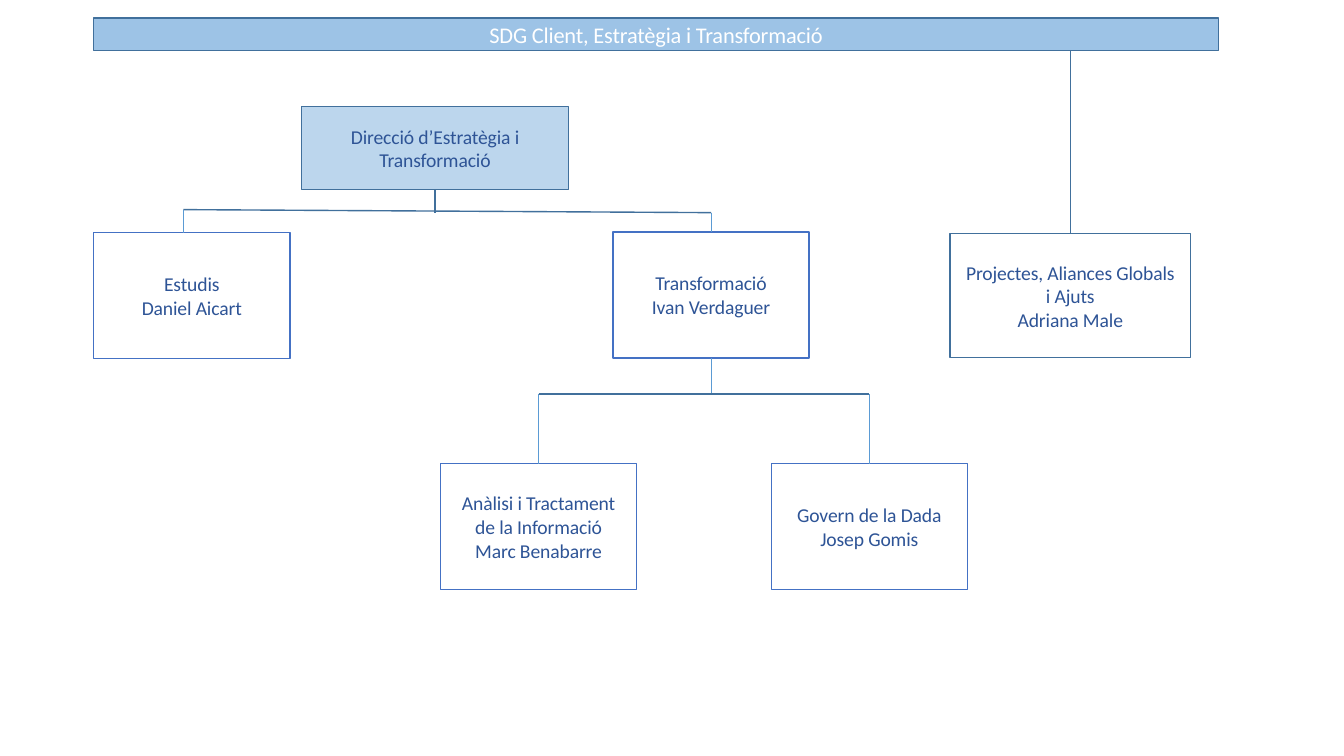
import pptx
import pptx.util
import pptx.dml.color
import pptx.enum.shapes
import pptx.enum.text
import pptx.oxml.ns
from lxml import etree

RGB = pptx.dml.color.RGBColor
WHITE = RGB(0xFF, 0xFF, 0xFF)
BAR_BLUE = RGB(0x9D, 0xC3, 0xE6)
PALE_BLUE = RGB(0xBC, 0xD6, 0xED)
TEXT_BLUE = RGB(0x2E, 0x54, 0x96)
BOX_BLUE = RGB(0x44, 0x71, 0xC4)
STEEL = RGB(0x41, 0x70, 0x9C)
SKY = RGB(0x5B, 0x9B, 0xD4)

# Positions are percentages of the slide's width and height
SLIDE_W, SLIDE_H = pptx.util.Inches(13.33), pptx.util.Inches(7.5)
UNIT_W, UNIT_H = 14.59, 16.67
TOP, BOTTOM = 0, 2


def x(share):
    return round(SLIDE_W * share / 100)


def y(share):
    return round(SLIDE_H * share / 100)


def middle(sp):
    return sp.left + sp.width // 2


def write(tf, text, size=14, color=TEXT_BLUE, spacing=-10):
    """One paragraph per line; a vertical tab breaks a line within one."""
    for i, line in enumerate(text.split("\n")):
        p = tf.paragraphs[0] if i == 0 else tf.add_paragraph()
        p.text = line
        p.alignment = pptx.enum.text.PP_ALIGN.CENTER
        for r in p.runs:
            r.font.name = "Calibri"
            r.font.size = pptx.util.Pt(size)
            r.font.color.rgb = color
            r.font._element.set("spc", str(spacing))


def add_box(s, text, left, top, width=UNIT_W, height=UNIT_H,
            fill=None, line=BOX_BLUE, **fmt):
    sp = s.shapes.add_shape(pptx.enum.shapes.MSO_SHAPE.RECTANGLE,
                            x(left), y(top), x(width), y(height))
    sp.shadow.inherit = False
    if fill is None:
        sp.fill.background()
    else:
        sp.fill.solid()
        sp.fill.fore_color.rgb = fill
    sp.line.color.rgb = line
    sp.line.width = pptx.util.Pt(1)
    tf = sp.text_frame
    tf.word_wrap = True
    tf.vertical_anchor = pptx.enum.text.MSO_ANCHOR.MIDDLE
    tf.margin_left = tf.margin_right = tf.margin_top = tf.margin_bottom = 0
    write(tf, text, **fmt)
    return sp


def add_line(s, x1, y1, x2, y2, color=STEEL, weight=1, begin=None, end=None):
    c = s.shapes.add_connector(pptx.enum.shapes.MSO_CONNECTOR.STRAIGHT,
                               x1, y1, x2, y2)
    c.line.color.rgb = color
    c.line.width = pptx.util.Pt(weight)
    etree.SubElement(c._element.spPr, pptx.oxml.ns.qn("a:effectLst"))
    if begin is not None:
        c.begin_connect(begin, BOTTOM)
    if end is not None:
        c.end_connect(end, TOP)


def main():
    prs = pptx.Presentation()
    prs.slide_width, prs.slide_height = SLIDE_W, SLIDE_H
    s = prs.slides.add_slide(prs.slide_layouts[6])

    # Units of the organisation
    bar = add_box(s, "SDG Client, Estratègia i Transformació", 6.98, 2.4,
                  83.68, 4.3, fill=BAR_BLUE, line=STEEL, size=16, color=WHITE)
    direction = add_box(s, "Direcció d’Estratègia i\vTransformació",
                        22.43, 14.13, 19.88, 10.93, fill=PALE_BLUE, line=STEEL)
    studies = add_box(s, "Estudis\nDaniel Aicart", 6.98, 30.8)
    transformation = add_box(s, "Transformació\nIvan Verdaguer", 45.61, 30.67)
    projects = add_box(s, "Projectes, Aliances Globals\vi Ajuts\nAdriana Male",
                       70.67, 30.93, 17.93, 16.4, line=STEEL)
    teams = [
        add_box(s, text, left, 61.33) for text, left in (
            ("Anàlisi i Tractament\vde la Informació\nMarc Benabarre", 32.78),
            ("Govern de la Dada\nJosep Gomis", 57.39))]

    # Top bar to projects
    mid = middle(projects)
    add_line(s, mid, bar.top + bar.height, mid, projects.top, end=projects)

    # Direction to its two areas, along a slightly sloping rail
    mid, left, right = middle(direction), x(13.65), middle(transformation)
    rail_left, rail_right = y(27.73), y(28.13)
    add_line(s, mid, direction.top + direction.height, mid, rail_right,
             begin=direction)
    add_line(s, left, rail_left, right, rail_right)
    add_line(s, left, rail_left, left, studies.top, SKY, 0.5)
    add_line(s, right, rail_right, right, transformation.top, SKY, 0.5,
             end=transformation)

    # Transformation to its two teams
    rail = y(52.13)
    add_line(s, right, transformation.top + transformation.height, right, rail,
             SKY, 0.5, begin=transformation)
    add_line(s, middle(teams[0]), rail, middle(teams[1]), rail)
    for team in teams:
        add_line(s, middle(team), rail, middle(team), team.top, SKY, 0.5,
                 end=team)

    prs.save("out.pptx")


if __name__ == "__main__":
    main()
